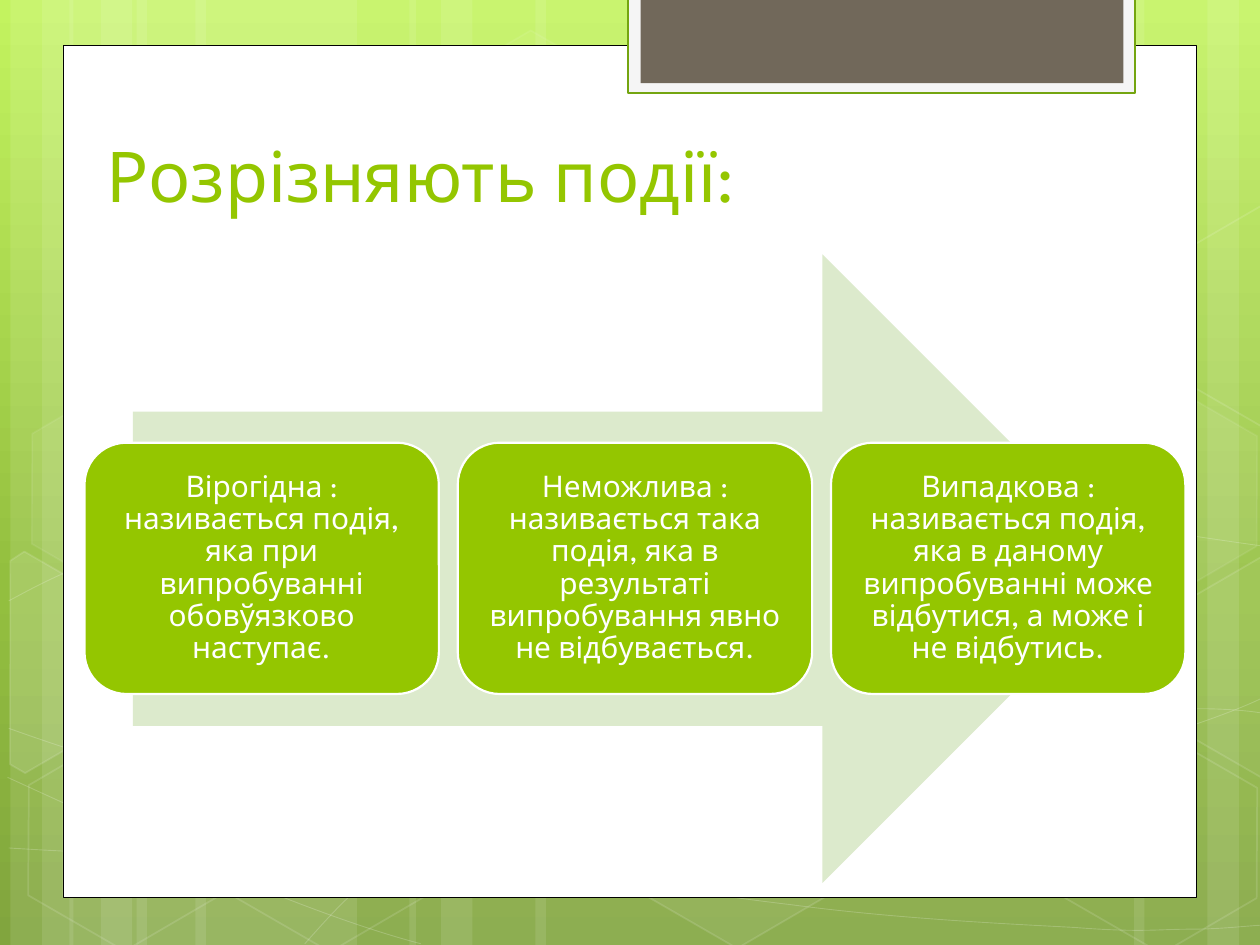
from copy import deepcopy

from lxml import etree
from pptx import Presentation
from pptx.dml.color import RGBColor
from pptx.enum.shapes import MSO_SHAPE as Preset
from pptx.enum.text import MSO_ANCHOR as Anchor, MSO_AUTO_SIZE as AutoSize, PP_ALIGN as Align
from pptx.oxml.ns import qn
from pptx.util import Pt

FONT = "League Spartan"
GREEN = "94C600"
WHITE = "FFFFFF"


def paint(color_format, color):
    color_format.rgb = RGBColor.from_string(color)


def style(shape, fill=None, line=None, width=1, fill_opacity=100, line_opacity=100):
    """Set fill and outline, with opacity in percent."""
    shape.shadow.inherit = False
    for target, color in ((shape.fill, fill), (shape.line.fill, line)):
        if color is None:
            target.background()
        else:
            target.solid()
            paint(target.fore_color, color)
    if line:
        shape.line.width = Pt(width)
    properties = shape.element.spPr
    for location, opacity in (("a:solidFill", fill_opacity), ("a:ln/a:solidFill", line_opacity)):
        for color_element in properties.xpath(location + "/a:srgbClr"):
            if opacity < 100:
                alpha = etree.SubElement(color_element, qn("a:alpha"))
                alpha.set("val", str(opacity * 1000))


presentation = Presentation()
presentation.slide_width, presentation.slide_height = Pt(720), Pt(540)
slide = presentation.slides.add_slide(presentation.slide_layouts[5])
shapes = slide.shapes

# Background gradient with three stops
background = slide.background.fill
background.gradient()
background.gradient_angle = 270
stop_list = slide.element.find(".//" + qn("a:gsLst"))
stop_list.insert(1, deepcopy(stop_list[0]))
for stop, color, position in zip(background.gradient_stops,
                                 ("C3F35F", "93BF3F", "81A53E"), (0, 0.62, 1)):
    paint(stop.color, color)
    stop.position = position

# Translucent vertical stripes: left, width
stripes = [(78, 126), (6, 36), (24, 60), (111.6, 126), (39.6, 36), (57.6, 60),
           (528, 126), (690, 36), (648, 60), (306, 222), (234, 36), (252, 60)]
for left, width in stripes:
    stripe = shapes.add_shape(Preset.RECTANGLE, Pt(left), 0, Pt(width), Pt(540))
    style(stripe, WHITE, fill_opacity=10)

# Thin waves: a start point, then three Bezier points per segment
waves = [
    [(5, 484.6), (44, 487), (83, 489), (137, 488), (191, 487), (258, 486), (330, 479),
     (402, 472), (504, 458), (570, 444), (636, 431), (703, 409), (725, 397)],
    [(5, 343.4), (26, 332), (47, 321), (87, 310), (128, 300), (186, 284), (250, 279),
     (314, 274), (392, 273), (471, 279), (550, 285), (682, 307), (725, 312.5)],
    [(4.3, 444.2), (91, 484), (178, 523), (240.5, 539.3)],
    [(5, 416.2), (27, 424), (50, 432), (92, 443.5), (134, 454), (197, 472), (257, 484.6),
     (317, 497), (392, 510), (452, 517), (512, 525), (576, 528), (614, 530),
     (652, 533), (662, 531), (680, 531), (699, 531), (712, 529), (725, 528.5)],
    [(174.2, 539.3), (187, 525), (200, 510), (217, 498), (235, 485), (259, 470), (279, 460),
     (300, 450), (312, 446), (338, 438), (364, 431), (413, 421), (438, 416),
     (464, 411), (467, 411), (490, 410), (512, 408), (547, 405), (572, 405),
     (597, 404), (638, 405), (638, 405), (654, 405), (670, 405), (686, 405),
     (699, 405), (711, 406), (718, 407), (724, 408), (722, 407), (724, 408)],
]
for wave in waves:
    points = [(Pt(x), Pt(y)) for x, y in wave]
    builder = shapes.build_freeform(*points[0])
    builder.add_line_segments(points[1:], close=False)
    curve = builder.convert_to_shape()
    style(curve, line=WHITE, width=0.5, line_opacity=20)
    # Turn each run of three line points into one Bezier segment
    lines = list(curve.element.iter(qn("a:lnTo")))
    outline = lines[0].getparent()
    for first in range(0, len(lines), 3):
        segment = etree.SubElement(outline, qn("a:cubicBezTo"))
        for line in lines[first:first + 3]:
            segment.append(line[0])
            outline.remove(line)

# Whole hexagons: left, top, fill opacity (0 for none), line opacity
hexagons = [(240.5, 26, 4, 8), (358, 424, 6, 12), (8, 425.5, 0, 12), (10, 224.6, 7, 8),
            (125.3, 426, 0, 12), (542, 326, 10, 12), (600.5, 427, 0, 12), (600.5, 226, 7, 8)]
for left, top, fill_opacity, line_opacity in hexagons:
    hexagon = shapes.add_shape(Preset.HEXAGON, Pt(left), Pt(top), Pt(126), Pt(109.4))
    hexagon.adjustments[0] = 0.285
    hexagon.rotation = 30
    style(hexagon, WHITE if fill_opacity else None, WHITE, 1, fill_opacity, line_opacity)

# Hexagons cut by the slide edge: left, top, outline, fill opacity
left_cut = [(0, 8.6), (4.3, 0), (68, 0), (99.2, 55), (68, 109.4), (58, 109.4)]
right_cut = [(0, 54), (31, 0), (37.5, 0), (97.6, 104), (94.5, 109.4), (31, 109.4)]
cut_hexagons = [(-23.8, 330.5, left_cut, 10), (660.3, 319.7, right_cut, 4),
                (660.3, 119, right_cut, 0)]
for left, top, corners, fill_opacity in cut_hexagons:
    points = [(Pt(left + x), Pt(top + y)) for x, y in corners]
    builder = shapes.build_freeform(*points[0])
    builder.add_line_segments(points[1:], close=True)
    cut_hexagon = builder.convert_to_shape()
    cut_hexagon.rotation = 30
    style(cut_hexagon, WHITE if fill_opacity else None, WHITE, 1, fill_opacity, 12)

# White page and the tab at its top
panels = [(36, 26, 648, 487, WHITE, "000000", 0.5),
          (359, -1.5, 289.5, 54.7, "F5F5F5", "74A510", 1.25),
          (366, -1.5, 276, 49, "71685A", None, 0)]
for left, top, width, height, fill, line, line_width in panels:
    panel = shapes.add_shape(Preset.RECTANGLE, Pt(left), Pt(top), Pt(width), Pt(height))
    style(panel, fill, line, line_width)

# Title, brought in front of the page
title = shapes.title
title.element.getparent().append(title.element)
title.left, title.top, title.width, title.height = Pt(53.7), Pt(37.5), Pt(553), Pt(90)
frame = title.text_frame
frame.auto_size = AutoSize.NONE
frame.vertical_anchor = Anchor.BOTTOM
paragraph = frame.paragraphs[0]
paragraph.alignment = Align.LEFT
run = paragraph.add_run()
run.text = "Розрізняють події:"
run.font.name, run.font.size = FONT, Pt(40)
paint(run.font.color, GREEN)

# Arrow behind the cards
arrow = shapes.add_shape(Preset.RIGHT_ARROW, Pt(76), Pt(145.4), Pt(573.6), Pt(359.2))
style(arrow, "DCEACC")

# Three kinds of events
events = [
    "Вірогідна : називається подія, яка при випробуванні обовўязково наступає.",
    "Неможлива : називається така подія, яка в результаті випробування явно не відбувається.",
    "Випадкова : називається подія, яка в даному випробуванні може відбутися, а може і не відбутись.",
]
for index, event in enumerate(events):
    card = shapes.add_shape(Preset.ROUNDED_RECTANGLE, Pt(48.3 + index * 213.3), Pt(253),
                            Pt(202.5), Pt(143.6))
    style(card, GREEN, WHITE, 1.25)
    frame = card.text_frame
    frame.word_wrap = True
    frame.vertical_anchor = Anchor.MIDDLE
    frame.margin_left = frame.margin_right = frame.margin_top = frame.margin_bottom = Pt(5)
    paragraph = frame.paragraphs[0]
    paragraph.alignment = Align.CENTER
    paragraph.line_spacing = 0.9
    run = paragraph.add_run()
    run.text = event
    run.font.name, run.font.size = FONT, Pt(17)
    paint(run.font.color, WHITE)

presentation.save("out.pptx")
